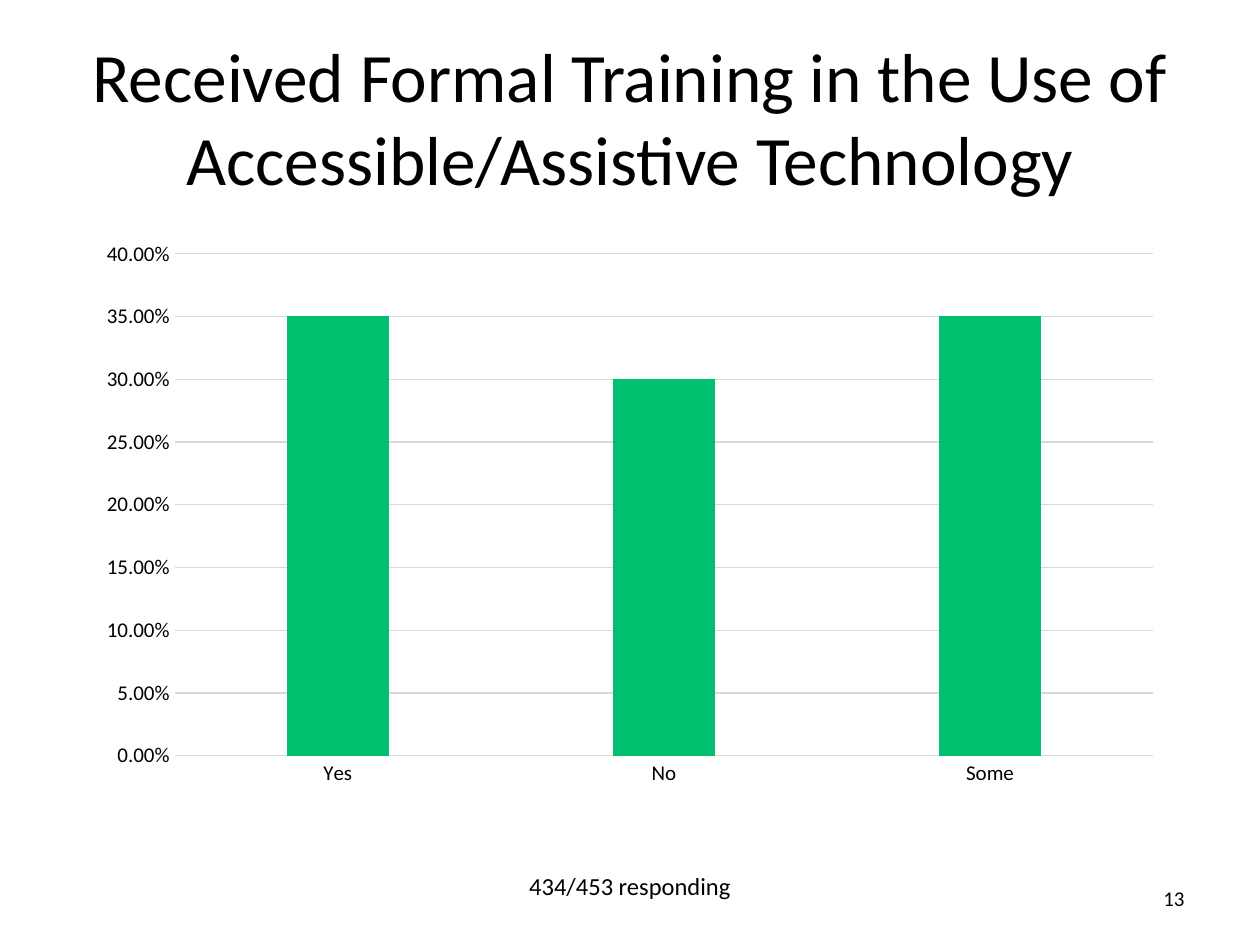
from pptx import Presentation
from pptx.chart.data import CategoryChartData
from pptx.dml.color import RGBColor
from pptx.enum.chart import XL_CHART_TYPE, XL_TICK_MARK
from pptx.enum.text import MSO_ANCHOR, PP_ALIGN
from pptx.util import Pt

FONT = "Calibri"
COLORS = {"text": "000000", "grid": "D9D9D9", "bar": "00BF6F"}
PX = 914400 / 126

# text, box in px, size in points, alignment, anchor, wrap
TEXTS = [
    ("Received Formal Training in the Use of Accessible/Assistive Technology",
     (63, 38, 1134, 157), 39.6, PP_ALIGN.CENTER, MSO_ANCHOR.MIDDLE, True),
    ("434/453 responding",
     (515, 865, 230, 43), 14, PP_ALIGN.CENTER, MSO_ANCHOR.TOP, False),
    ("13",
     (970, 873, 227, 50), 12, PP_ALIGN.RIGHT, MSO_ANCHOR.MIDDLE, True),
]
TRAINING = {"Yes": 0.35, "No": 0.3, "Some": 0.35}
CHART_BOX = (85, 230, 1090, 567)


def emu(lengths):
    return [round(length * PX) for length in lengths]


def color(name):
    return RGBColor.from_string(COLORS[name])


def style_font(font, size):
    font.name = FONT
    font.size = Pt(size)
    font.color.rgb = color("text")


def style_line(line):
    line.color.rgb = color("grid")
    line.width = Pt(0.75)


def add_text(slide, text, box, size, align, anchor, wrap):
    frame = slide.shapes.add_textbox(*emu(box)).text_frame
    frame.word_wrap = wrap
    frame.vertical_anchor = anchor
    paragraph = frame.paragraphs[0]
    paragraph.text = text
    paragraph.alignment = align
    style_font(paragraph.font, size)


def add_training_chart(slide):
    data = CategoryChartData(number_format="0.00%")
    data.categories = list(TRAINING)
    data.add_series("Series 1", list(TRAINING.values()))
    chart = slide.shapes.add_chart(
        XL_CHART_TYPE.COLUMN_CLUSTERED, *emu(CHART_BOX), data).chart
    chart.has_legend = False
    chart.has_title = False
    style_font(chart.font, 10)

    plot = chart.plots[0]
    plot.gap_width = 219
    plot.overlap = -27
    plot.vary_by_categories = False
    fill = plot.series[0].format.fill
    fill.solid()
    fill.fore_color.rgb = color("bar")

    for axis in (chart.category_axis, chart.value_axis):
        axis.major_tick_mark = axis.minor_tick_mark = XL_TICK_MARK.NONE
        style_font(axis.tick_labels.font, 12)
    style_line(chart.category_axis.format.line)

    percent = chart.value_axis
    percent.minimum_scale = 0
    percent.maximum_scale = 0.4
    percent.major_unit = 0.05
    percent.tick_labels.number_format = "0.00%"
    percent.tick_labels.number_format_is_linked = False
    percent.format.line.fill.background()
    style_line(percent.major_gridlines.format.line)


def main():
    deck = Presentation()
    deck.slide_width, deck.slide_height = emu((1260, 945))
    slide = deck.slides.add_slide(deck.slide_layouts[6])
    for entry in TEXTS:
        add_text(slide, *entry)
    add_training_chart(slide)
    deck.save("out.pptx")


if __name__ == "__main__":
    main()
